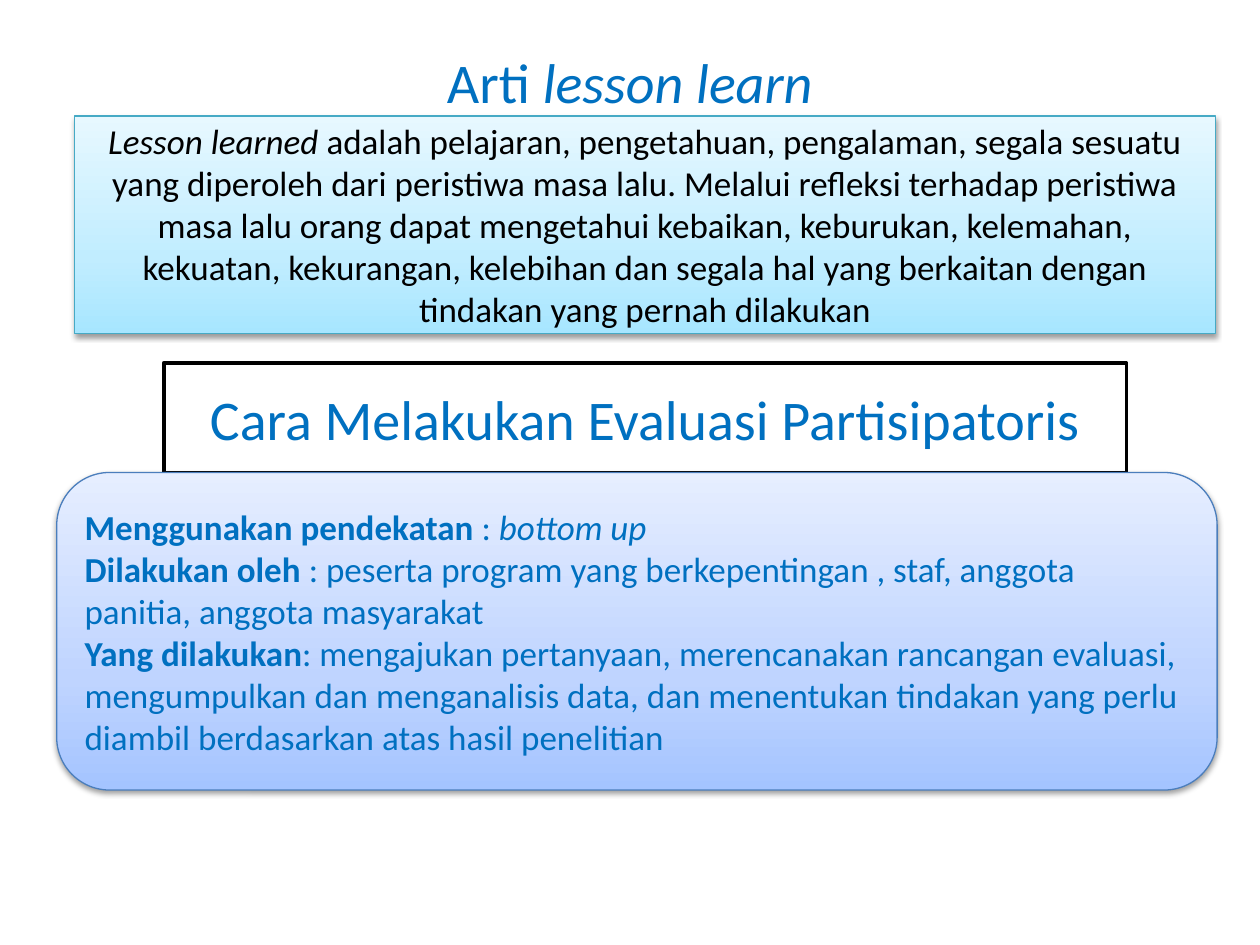
from dataclasses import dataclass
from typing import Optional

import copy
import lxml.etree
import pptx
import pptx.dml.color
import pptx.enum.shapes
import pptx.enum.text
import pptx.oxml
import pptx.oxml.ns
import pptx.util

SHAPES = pptx.enum.shapes.MSO_SHAPE
ALIGN = pptx.enum.text.PP_ALIGN
qn = pptx.oxml.ns.qn

# Grid: 100 columns by 75 rows
SLIDE_WIDTH = pptx.util.Inches(10)
SLIDE_HEIGHT = pptx.util.Inches(7.5)
COLUMN = SLIDE_WIDTH / 100
ROW = SLIDE_HEIGHT / 75

BLUE = "0070C0"
BLACK = "000000"
BOLD = {"bold": True}
ITALIC = {"italic": True}
PLAIN = {}
STOP_POSITIONS = (0, 35, 100)  # per cent, from the bottom up


@dataclass
class Panel:
    """A block of text; column, row, columns and rows are grid units."""
    column: float
    row: float
    columns: float
    rows: float
    paragraphs: list
    size: int = 20
    color: str = BLUE
    align: ALIGN = ALIGN.CENTER
    outline: Optional[str] = None
    outline_width: float = 0.75
    fill: tuple = ()
    preset: SHAPES = SHAPES.RECTANGLE


PANELS = [
    # Title
    Panel(5, 3, 90, 6.9, [[("Arti ", PLAIN), ("lesson learn", ITALIC)]], size=32),
    # Definition
    Panel(5.9, 9.2, 90.6, 17.3, [[
        ("Lesson learned ", ITALIC),
        ("adalah pelajaran, pengetahuan, pengalaman, segala sesuatu yang diperoleh "
         "dari peristiwa masa lalu. Melalui refleksi terhadap peristiwa masa lalu "
         "orang dapat mengetahui kebaikan, keburukan, kelemahan, kekuatan, "
         "kekurangan, kelebihan dan segala hal yang berkaitan dengan tindakan yang "
         "pernah dilakukan", PLAIN),
    ]], color=BLACK, outline="46AAC5", fill=("A7E6FF", "C1EDFF", "E7F8FF")),
    # Second heading
    Panel(13, 28.8, 76.4, 8.7, [[("Cara Melakukan Evaluasi Partisipatoris", PLAIN)]],
          size=32, outline=BLACK, outline_width=2, fill=("FFFFFF",)),
    # How the evaluation is done
    Panel(4.5, 37.5, 92.1, 25.2, [
        [("Menggunakan pendekatan ", BOLD), (": ", PLAIN), ("bottom up", ITALIC)],
        [("Dilakukan oleh ", BOLD),
         (": peserta program yang berkepentingan , staf, anggota panitia, "
          "anggota masyarakat", PLAIN)],
        [("Yang dilakukan", BOLD),
         (": mengajukan pertanyaan, merencanakan rancangan evaluasi, mengumpulkan "
          "dan menganalisis data, dan menentukan tindakan yang perlu diambil "
          "berdasarkan atas hasil penelitian", PLAIN)],
    ], align=ALIGN.LEFT, outline="4B7EBC", fill=("A4C4FF", "BFD4FF", "E6EEFF"),
        preset=SHAPES.ROUNDED_RECTANGLE),
]


def rgb(value: str) -> pptx.dml.color.RGBColor:
    return pptx.dml.color.RGBColor.from_string(value)


def fill_gradient(shape, colors: tuple) -> None:
    shape.fill.gradient()
    shape.fill.gradient_angle = 90
    stops = shape.element.spPr.find(".//" + qn("a:gsLst"))
    stops.append(copy.deepcopy(stops[0]))  # a third stop
    for stop, position, color in zip(shape.fill.gradient_stops, STOP_POSITIONS, colors):
        stop.color.rgb = rgb(color)
        stop.position = position / 100


def add_shadow(shape) -> None:
    effects = shape.element.spPr.find(qn("a:effectLst"))
    shadow = lxml.etree.SubElement(
        effects, qn("a:outerShdw"), blurRad=str(pptx.util.Pt(3.1)),
        dist=str(pptx.util.Pt(1.6)), dir="5400000", rotWithShape="0")
    color = lxml.etree.SubElement(shadow, qn("a:srgbClr"), val=BLACK)
    lxml.etree.SubElement(color, qn("a:alpha"), val="38000")


def write_text(frame, panel: Panel) -> None:
    frame.word_wrap = True
    frame.vertical_anchor = pptx.enum.text.MSO_ANCHOR.MIDDLE
    for index, pieces in enumerate(panel.paragraphs):
        paragraph = frame.add_paragraph() if index else frame.paragraphs[0]
        paragraph.alignment = panel.align
        for words, style in pieces:
            run = paragraph.add_run()
            run.text = words
            run.font.color.rgb = rgb(panel.color)
            font_values = {"name": "Calibri", "size": pptx.util.Pt(panel.size), **style}
            for attribute, value in font_values.items():
                setattr(run.font, attribute, value)


def draw_panel(slide, panel: Panel) -> None:
    place = [round(length) for length in (
        panel.column * COLUMN, panel.row * ROW,
        panel.columns * COLUMN, panel.rows * ROW)]
    if panel.outline is None:
        shape = slide.shapes.add_textbox(*place)
    else:
        shape = slide.shapes.add_shape(panel.preset, *place)
        shape.shadow.inherit = False
        shape.line.color.rgb = rgb(panel.outline)
        shape.line.width = pptx.util.Pt(panel.outline_width)
        if len(panel.fill) > 1:
            fill_gradient(shape, panel.fill)
            add_shadow(shape)
        else:
            shape.fill.solid()
            shape.fill.fore_color.rgb = rgb(panel.fill[0])
    write_text(shape.text_frame, panel)


def main() -> None:
    deck = pptx.Presentation()
    deck.slide_width, deck.slide_height = SLIDE_WIDTH, SLIDE_HEIGHT
    slide = deck.slides.add_slide(deck.slide_layouts[6])
    for panel in PANELS:
        draw_panel(slide, panel)
    deck.save("out.pptx")


if __name__ == "__main__":
    main()
